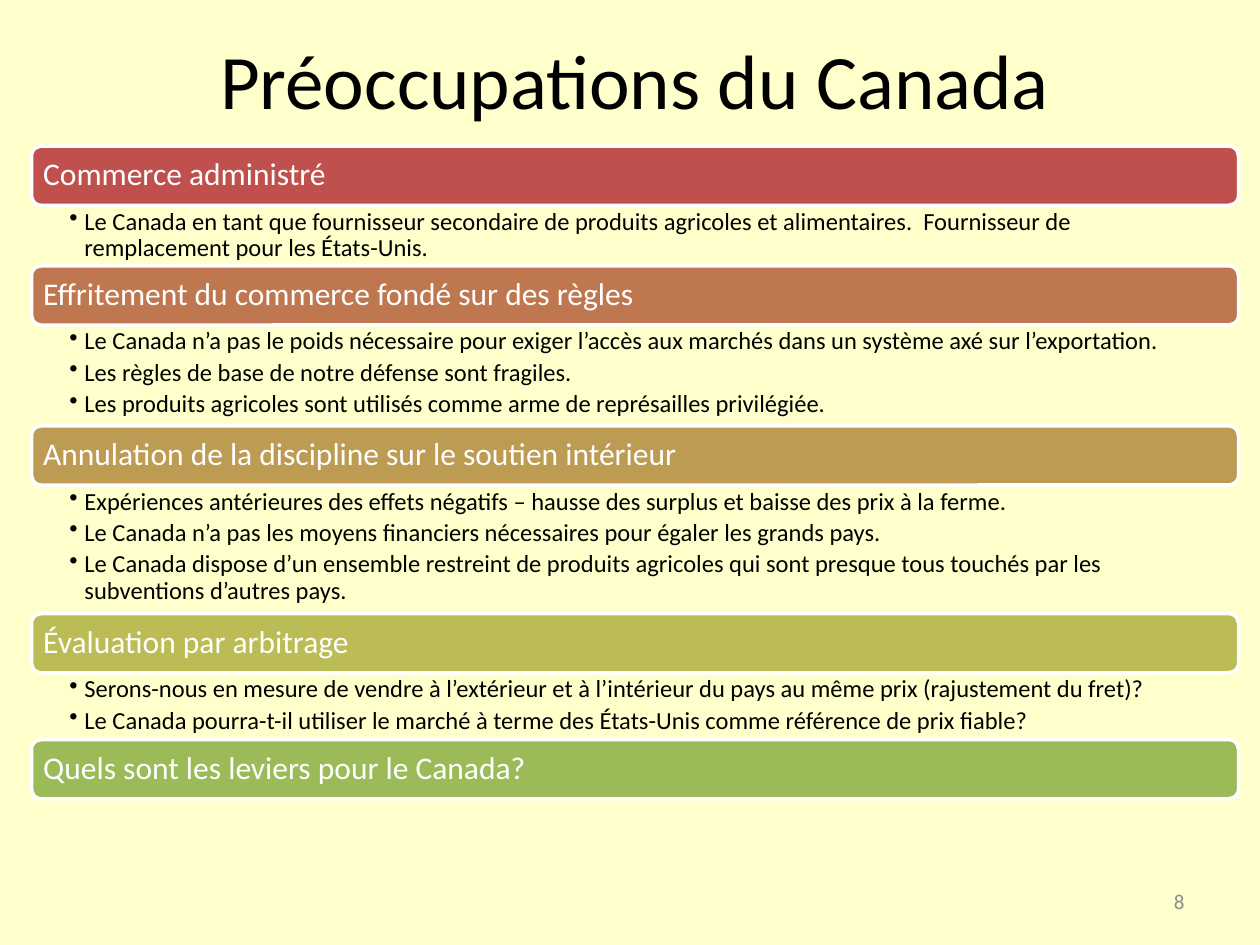
from lxml import etree
from pptx import Presentation
from pptx import util as u
from pptx.dml.color import RGBColor
from pptx.enum import shapes, text
from pptx.oxml.ns import qn

CREAM = RGBColor(0xFF, 0xFF, 0xCC)
WHITE = RGBColor(0xFF, 0xFF, 0xFF)
BLACK = RGBColor(0x00, 0x00, 0x00)
GREY = RGBColor(0x8C, 0x8C, 0x8C)
RED = RGBColor(0xC0, 0x50, 0x4D)
RUST = RGBColor(0xBF, 0x77, 0x50)
OCHRE = RGBColor(0xBD, 0x9B, 0x53)
OLIVE = RGBColor(0xBC, 0xBC, 0x56)
GREEN = RGBColor(0x9B, 0xBB, 0x59)

# The grid has 100 columns and 75 rows
COLUMNS, ROWS = 100, 75
LEFT, WIDTH = 2.5, 95.8
FIRST_ROW, BAR_ROWS = 11.6, 4.7

# Heading, bar colour, rows taken by the points, points
SECTIONS = [
    ("Commerce administré", RED, 4.8, [
        "Le Canada en tant que fournisseur secondaire de produits agricoles et "
        "alimentaires.  Fournisseur de remplacement pour les États-Unis."]),
    ("Effritement du commerce fondé sur des règles", RUST, 8, [
        "Le Canada n’a pas le poids nécessaire pour exiger l’accès aux marchés "
        "dans un système axé sur l’exportation.",
        "Les règles de base de notre défense sont fragiles.",
        "Les produits agricoles sont utilisés comme arme de représailles privilégiée."]),
    ("Annulation de la discipline sur le soutien intérieur", OCHRE, 10.2, [
        "Expériences antérieures des effets négatifs – hausse des surplus et "
        "baisse des prix à la ferme.",
        "Le Canada n’a pas les moyens financiers nécessaires pour égaler les grands pays.",
        "Le Canada dispose d’un ensemble restreint de produits agricoles qui sont "
        "presque tous touchés par les subventions d’autres pays."]),
    ("Évaluation par arbitrage", OLIVE, 5.3, [
        "Serons-nous en mesure de vendre à l’extérieur et à l’intérieur du pays "
        "au même prix (rajustement du fret)?",
        "Le Canada pourra-t-il utiliser le marché à terme des États-Unis comme "
        "référence de prix fiable?"]),
    ("Quels sont les leviers pour le Canada?", GREEN, 0, []),
]


class SlideBuilder:
    font = "Calibri"

    def __init__(self, deck):
        self.cell_width = deck.slide_width / COLUMNS
        self.cell_height = deck.slide_height / ROWS
        self.page = deck.slides.add_slide(deck.slide_layouts[5])
        self.page.background.fill.solid()
        self.page.background.fill.fore_color.rgb = CREAM

    def place(self, column, row, columns, rows):
        return (round(column * self.cell_width), round(row * self.cell_height),
                round(columns * self.cell_width), round(rows * self.cell_height))

    def set_text(self, box, lines, size, color, align=text.PP_ALIGN.LEFT,
                 anchor=text.MSO_ANCHOR.MIDDLE, spacing=None):
        frame = box.text_frame
        frame.text = "\n".join(lines)
        frame.word_wrap = True
        frame.auto_size = text.MSO_AUTO_SIZE.NONE
        frame.vertical_anchor = anchor
        for para in frame.paragraphs:
            para.alignment = align
            para.line_spacing = spacing
            for span in para.runs:
                span.font.name = self.font
                span.font.size = u.Pt(size)
                span.font.color.rgb = color
        return frame

    def title(self, wording, *area):
        box = self.page.shapes.title
        box.left, box.top, box.width, box.height = self.place(*area)
        self.set_text(box, [wording], 44, BLACK, text.PP_ALIGN.CENTER)

    def bar(self, heading, color, *area):
        box = self.page.shapes.add_shape(
            shapes.MSO_SHAPE.ROUNDED_RECTANGLE, *self.place(*area))
        box.shadow.inherit = False
        box.fill.solid()
        box.fill.fore_color.rgb = color
        box.line.color.rgb = WHITE
        box.line.width = u.Pt(2)
        frame = self.set_text(box, [heading], 18, WHITE, spacing=0.9)
        frame.margin_left = frame.margin_right = u.Inches(0.07)

    def bullets(self, points, *area):
        box = self.page.shapes.add_textbox(*self.place(*area))
        frame = self.set_text(box, points, 14, BLACK,
                              anchor=text.MSO_ANCHOR.TOP, spacing=0.9)
        frame.margin_left, frame.margin_right = u.Inches(0.3), u.Inches(0.14)
        frame.margin_top = frame.margin_bottom = u.Inches(0.03)
        for para in frame.paragraphs:
            para.level = 1
            para.space_after = u.Pt(2.8)
            # Hanging bullet
            properties = para._p.get_or_add_pPr()
            properties.set("marL", str(u.Inches(0.12)))
            properties.set("indent", str(-u.Inches(0.12)))
            etree.SubElement(properties, qn("a:buChar"), char="•")

    def page_number(self, number, *area):
        box = self.page.shapes.add_textbox(*self.place(*area))
        self.set_text(box, [number], 12, GREY, text.PP_ALIGN.RIGHT)


def main():
    deck = Presentation()
    deck.slide_width, deck.slide_height = u.Inches(10), u.Inches(7.5)
    builder = SlideBuilder(deck)
    builder.title("Préoccupations du Canada", 5.4, 0, 90, 12.5)

    # Stacked sections: a coloured bar, then its points
    row = FIRST_ROW
    for heading, color, point_rows, points in SECTIONS:
        builder.bar(heading, color, LEFT, row, WIDTH, BAR_ROWS)
        row += BAR_ROWS
        if points:
            builder.bullets(points, LEFT, row, WIDTH, point_rows)
        row += point_rows

    builder.page_number("8", 71.7, 69.5, 23.3, 4)
    deck.save("out.pptx")


if __name__ == "__main__":
    main()
